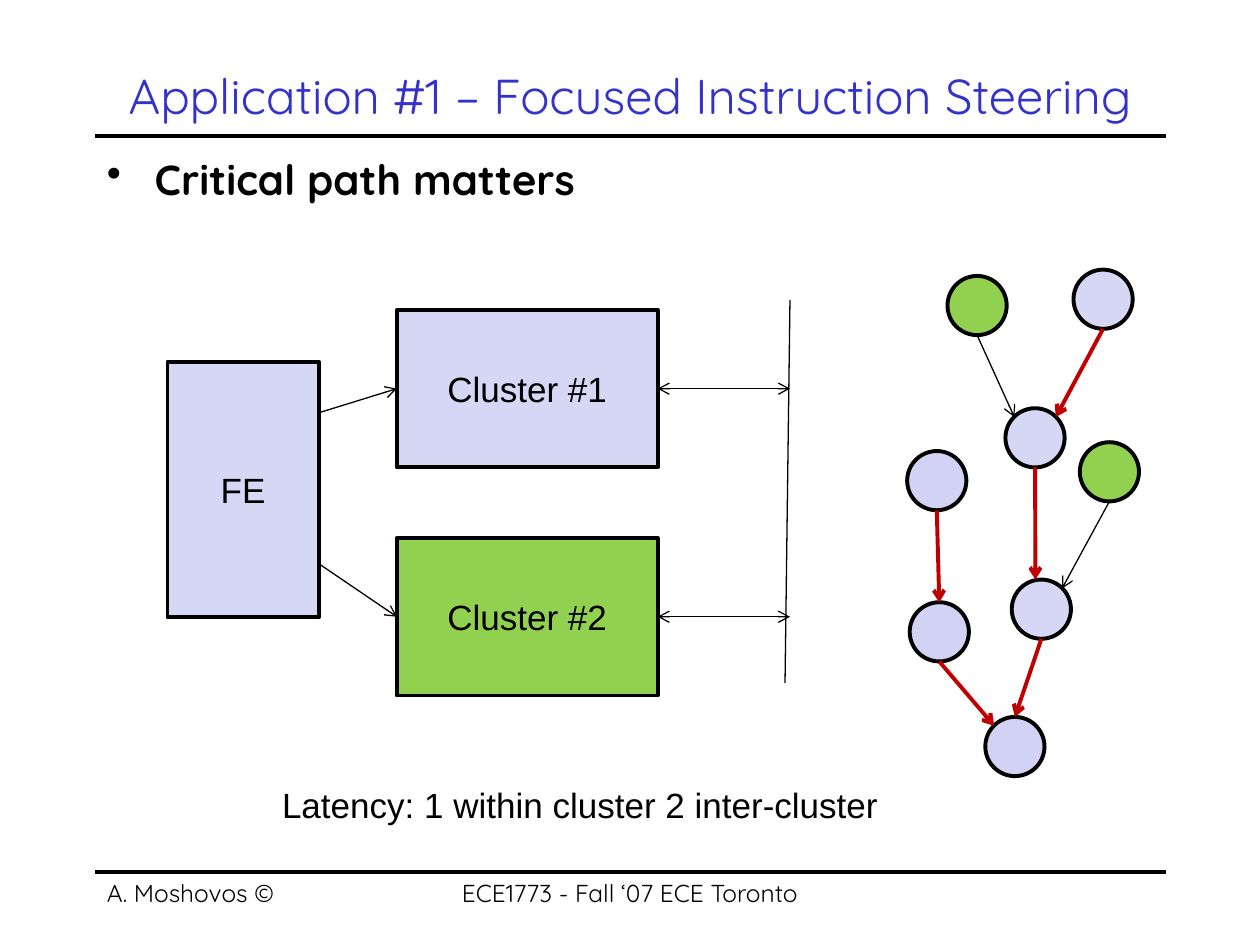
import dataclasses

import pptx
import pptx.dml.color
import pptx.enum.shapes
import pptx.enum.text
import pptx.oxml
import pptx.oxml.ns
import pptx.util

Inches = pptx.util.Inches
SHAPES = pptx.enum.shapes.MSO_SHAPE
ALIGN = pptx.enum.text.PP_ALIGN
ANCHOR = pptx.enum.text.MSO_ANCHOR
TOP, LEFT, BOTTOM, RIGHT = range(4)


@dataclasses.dataclass(frozen=True)
class Theme:
    ink: str = "000000"
    title: str = "3333CC"
    lavender: str = "D6D6F5"
    pale: str = "D2D2F4"
    green: str = "92D050"
    critical: str = "C00000"
    display_font: str = "Quicksand"
    label_font: str = "Arial"
    title_size: int = 28
    body_size: int = 24
    label_size: int = 20
    footer_size: int = 14
    thin: float = 0.75
    thick: float = 2.25


@dataclasses.dataclass(frozen=True)
class Box:
    """A rectangle in inches."""
    left: float
    top: float
    width: float
    height: float

    def inner(self, left, top, width, height):
        return Box(self.left + left, self.top + top, width, height)

    def point(self, across, down):
        """The point at the given fractions of width and height."""
        return self.left + across * self.width, self.top + down * self.height

    def lengths(self):
        return [Inches(value) for value in dataclasses.astuple(self)]


THEME = Theme()


def rgb(color):
    return pptx.dml.color.RGBColor.from_string(color)


def write(shape, text, size=THEME.label_size, font=THEME.label_font, color=THEME.ink,
          bold=False, align=ALIGN.LEFT, anchor=ANCHOR.TOP, wrap=True):
    frame = shape.text_frame
    frame.word_wrap = wrap
    frame.vertical_anchor = anchor
    para = frame.paragraphs[0]
    para.alignment = align
    span = para.add_run()
    span.text = text
    span.font.name = font
    span.font.size = pptx.util.Pt(size)
    span.font.bold = bold
    span.font.color.rgb = rgb(color)
    return para


def add_text(page, box, text, **style):
    return write(page.shapes.add_textbox(*box.lengths()), text, **style)


def add_figure(page, kind, box, fill, text=None):
    shape = page.shapes.add_shape(kind, *box.lengths())
    shape.shadow.inherit = False
    shape.fill.solid()
    shape.fill.fore_color.rgb = rgb(fill)
    shape.line.color.rgb = rgb(THEME.ink)
    shape.line.width = pptx.util.Pt(THEME.thick)
    if text:
        write(shape, text, align=ALIGN.CENTER, anchor=ANCHOR.MIDDLE)
    return shape


def add_line(page, start, end, color=THEME.ink, width=THEME.thin, arrows=()):
    """Draw a line; arrows may name headEnd (at start) and tailEnd (at end)."""
    line = page.shapes.add_connector(
        pptx.enum.shapes.MSO_CONNECTOR.STRAIGHT,
        *[Inches(value) for value in (*start, *end)])
    line.line.color.rgb = rgb(color)
    line.line.width = pptx.util.Pt(width)
    outline = line.line._get_or_add_ln()
    for name in arrows:
        pptx.oxml.ns.qn("a:" + name)
        arrow = outline.makeelement(pptx.oxml.ns.qn("a:" + name), {"type": "arrow"})
        outline.append(arrow)
    properties = line._element.spPr
    properties.append(properties.makeelement(pptx.oxml.ns.qn("a:effectLst"), {}))
    return line


def add_header(page, box):
    title = page.shapes.title
    title.left, title.top, title.width, title.height = box.lengths()
    write(title, "Application #1 – Focused Instruction Steering", size=THEME.title_size,
          font=THEME.display_font, color=THEME.title, align=ALIGN.CENTER,
          anchor=ANCHOR.MIDDLE)
    add_line(page, box.point(0, 1), box.point(1, 1), width=THEME.thick)


def add_footer(page, box):
    add_line(page, box.point(0, 0), box.point(1, 0), width=THEME.thick)
    style = {"size": THEME.footer_size, "font": THEME.display_font}
    add_text(page, box.inner(0, 0, 2.08, box.height), "A. Moshovos ©", **style)
    add_text(page, box.inner(2.5, 0, 3.5, box.height), "ECE1773 - Fall ‘07 ECE Toronto",
             align=ALIGN.CENTER, **style)


def add_bullet(page, box):
    para = add_text(page, box, "Critical path matters", size=THEME.body_size,
                    font=THEME.display_font, bold=True)
    properties = para._p.get_or_add_pPr()
    indent = Inches(0.38)
    properties.set("marL", str(indent))
    properties.set("indent", str(-indent))
    mark = properties.makeelement(pptx.oxml.ns.qn("a:buChar"), {"char": "•"})
    properties.append(mark)


def add_clusters(page, box):
    """The front end feeding two clusters that share a bus."""
    front = box.inner(0, 0.49, 1.2, 2.03)
    add_figure(page, SHAPES.RECTANGLE, front, THEME.lavender, "FE")
    bus_top, bus_bottom = box.point(1, 0), box.point(0.992, 1)
    add_line(page, bus_top, bus_bottom)
    clusters = [("Cluster #1", THEME.lavender, 0.08, 0.2),
                ("Cluster #2", THEME.green, 1.89, 0.79)]
    for name, fill, top, exit_height in clusters:
        area = box.inner(1.82, top, 2.07, 1.25)
        cluster = add_figure(page, SHAPES.RECTANGLE, area, fill, name)
        feed = add_line(page, front.point(1, exit_height), area.point(0, 0.5),
                        arrows=["tailEnd"])
        feed.end_connect(cluster, LEFT)
        side = area.point(1, 0.5)
        link = add_line(page, side, (bus_top[0], side[1]), arrows=["headEnd", "tailEnd"])
        link.begin_connect(cluster, RIGHT)


def add_dependence_graph(page, box):
    """Instructions as circles; critical dependences as heavy arrows."""
    diameter = 0.47
    nodes = {
        "first": (0.32, 0.05, THEME.green),
        "second": (1.32, 0, THEME.lavender),
        "join": (0.78, 1.1, THEME.lavender),
        "left": (0, 1.44, THEME.pale),
        "right": (1.37, 1.37, THEME.green),
        "left next": (0.02, 2.64, THEME.pale),
        "right next": (0.83, 2.46, THEME.lavender),
        "last": (0.62, 3.55, THEME.pale),
    }
    areas = {}
    for name, (left, top, fill) in nodes.items():
        areas[name] = box.inner(left, top, diameter, diameter)
        add_figure(page, SHAPES.OVAL, areas[name], fill)
    upper_left, upper_right, top = (0.15, 0.15), (0.85, 0.15), (0.5, 0)
    edges = [
        ("first", "join", upper_left, False),
        ("second", "join", upper_right, True),
        ("join", "right next", (0.4, 0), True),
        ("right", "right next", upper_right, False),
        ("left", "left next", top, True),
        ("left next", "last", upper_left, True),
        ("right next", "last", top, True),
    ]
    for source, target, side, critical in edges:
        add_line(page, areas[source].point(0.5, 1), areas[target].point(*side),
                 color=THEME.critical if critical else THEME.ink,
                 width=THEME.thick if critical else THEME.thin, arrows=["tailEnd"])


def main():
    deck = pptx.Presentation()
    deck.slide_width, deck.slide_height = Inches(10), Inches(7.5)
    page = deck.slides.add_slide(deck.slide_layouts.get_by_name("Title Only"))
    add_header(page, Box(0.75, 0.42, 8.5, 0.66))
    add_footer(page, Box(0.75, 6.92, 8.5, 0.42))
    add_bullet(page, Box(0.75, 1.17, 8.5, 0.6))
    add_clusters(page, Box(1.33, 2.38, 4.94, 3.04))
    add_text(page, Box(2.14, 6.17, 4.97, 0.44),
             "Latency: 1 within cluster 2 inter-cluster", wrap=False)
    add_dependence_graph(page, Box(7.2, 2.14, 1.84, 4.02))
    deck.save("out.pptx")


if __name__ == "__main__":
    main()
